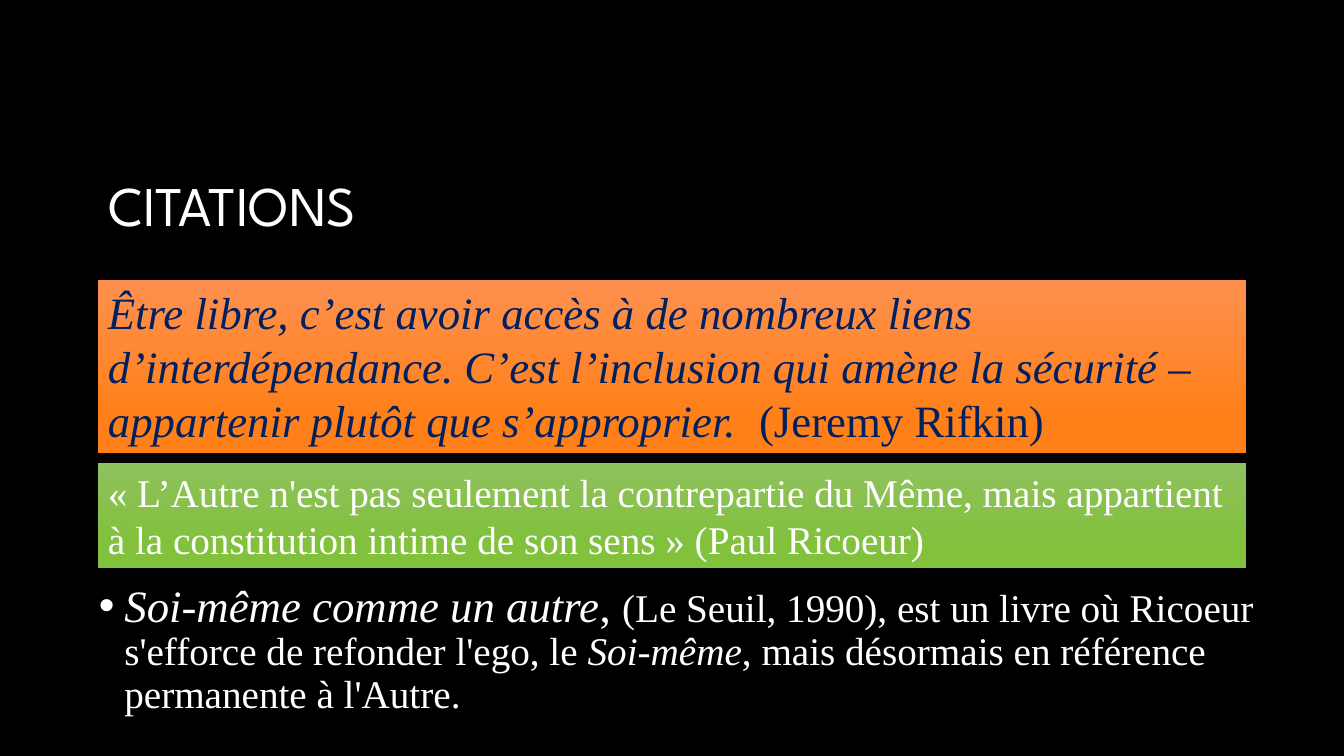
from dataclasses import dataclass

from lxml.etree import SubElement
from pptx import Presentation
from pptx.dml.color import RGBColor
from pptx.enum.shapes import MSO_SHAPE
from pptx.enum.text import MSO_ANCHOR, MSO_AUTO_SIZE, PP_ALIGN
from pptx.oxml.ns import qn
from pptx.slide import Slide
from pptx.text.text import TextFrame, _Paragraph
from pptx.util import Cm, Pt


@dataclass(frozen=True)
class Theme:
    background: RGBColor = RGBColor(0x00, 0x00, 0x00)
    light: RGBColor = RGBColor(0xFF, 0xFF, 0xFF)
    navy: RGBColor = RGBColor(0x00, 0x20, 0x60)
    orange: tuple = (RGBColor(0xFE, 0x90, 0x4F), RGBColor(0xFF, 0x80, 0x19))
    green: tuple = (RGBColor(0x8F, 0xC1, 0x5E), RGBColor(0x81, 0xC1, 0x3C))
    heading_font: str = "League Spartan"
    text_font: str = "Times New Roman"
    heading_size: Pt = Pt(40)
    large: Pt = Pt(32)
    medium: Pt = Pt(28)


@dataclass(frozen=True)
class Passage:
    text: str
    italic: bool = False
    size: Pt | None = None


@dataclass(frozen=True)
class Quote:
    top: Cm
    height: Cm
    gradient: tuple
    color: RGBColor
    size: Pt
    passages: tuple


THEME = Theme()
LEFT = Cm(2.47)
QUOTE_WIDTH = Cm(28.93)
BULLET_INDENT = Cm(0.64)

QUOTES = (
    Quote(Cm(7.06), Cm(4.36), THEME.orange, THEME.navy, THEME.large, (
        Passage("Être libre, c’est avoir accès à de nombreux liens d’interdépendance. "
                "C’est l’inclusion qui amène la sécurité – appartenir plutôt que "
                "s’approprier.  ", italic=True),
        Passage("(Jeremy Rifkin)"),
    )),
    Quote(Cm(11.67), Cm(2.65), THEME.green, THEME.light, THEME.medium, (
        Passage("« L’Autre n'est pas seulement la contrepartie du Même, mais appartient "
                "à la constitution intime de son sens » (Paul Ricoeur)"),
    )),
)

BOOK = (
    Passage("Soi-même comme un autre", italic=True, size=THEME.large),
    Passage(", ", size=THEME.large),
    Passage("(Le Seuil, 1990), est un livre où Ricoeur s'efforce de refonder l'ego, le "),
    Passage("Soi-même", italic=True),
    Passage(", mais désormais en référence permanente à l'Autre."),
)


def style(paragraph: _Paragraph, font_name: str, size: Pt, color: RGBColor) -> None:
    paragraph.alignment = PP_ALIGN.LEFT
    paragraph.space_before = Pt(0)
    paragraph.font.name = font_name
    paragraph.font.size = size
    paragraph.font.color.rgb = color


def write(frame: TextFrame, passages: tuple, size: Pt, color: RGBColor) -> None:
    frame.word_wrap = True
    paragraph = frame.paragraphs[0]
    style(paragraph, THEME.text_font, size, color)
    for passage in passages:
        run = paragraph.add_run()
        run.text = passage.text
        if passage.italic:
            run.font.italic = True
        if passage.size:
            run.font.size = passage.size


def add_heading(slide: Slide) -> None:
    heading = slide.shapes.title
    heading.left, heading.top, heading.width, heading.height = LEFT, Cm(3.45), Cm(23.85), Cm(3.58)
    frame = heading.text_frame
    frame.text = "CITATIONS"
    frame.vertical_anchor = MSO_ANCHOR.MIDDLE
    frame.auto_size = MSO_AUTO_SIZE.NONE
    frame.paragraphs[0].line_spacing = 0.9
    style(frame.paragraphs[0], THEME.heading_font, THEME.heading_size, THEME.light)


def add_quote(slide: Slide, quote: Quote) -> None:
    panel = slide.shapes.add_shape(MSO_SHAPE.RECTANGLE, LEFT, quote.top, QUOTE_WIDTH, quote.height)
    panel.shadow.inherit = False
    panel.line.fill.background()
    panel.fill.gradient()
    panel.fill.gradient_angle = 270
    for stop, color, position in zip(panel.fill.gradient_stops, quote.gradient, (0, 0.78)):
        stop.color.rgb = color
        stop.position = position
    frame = panel.text_frame
    frame.auto_size = MSO_AUTO_SIZE.SHAPE_TO_FIT_TEXT
    frame.vertical_anchor = MSO_ANCHOR.TOP
    write(frame, quote.passages, quote.size, quote.color)


def add_book(slide: Slide) -> None:
    book = slide.placeholders[1]
    book.left, book.top, book.width, book.height = Cm(2.24), Cm(14.58), Cm(29.72), Cm(3.89)
    frame = book.text_frame
    frame.auto_size = MSO_AUTO_SIZE.NONE
    paragraph = frame.paragraphs[0]
    paragraph.line_spacing = 0.9
    paragraph.space_before = Pt(0)
    properties = paragraph._p.get_or_add_pPr()
    properties.set("marL", str(BULLET_INDENT))
    properties.set("indent", str(-BULLET_INDENT))
    SubElement(properties, qn("a:buFont"), typeface="Arial")
    SubElement(properties, qn("a:buChar"), char="•")
    write(frame, BOOK, THEME.medium, THEME.light)


def main() -> None:
    presentation = Presentation()
    presentation.slide_width, presentation.slide_height = Cm(33.87), Cm(19.05)
    slide = presentation.slides.add_slide(presentation.slide_layouts[1])
    slide.background.fill.solid()
    slide.background.fill.fore_color.rgb = THEME.background
    add_heading(slide)
    add_book(slide)
    for quote in QUOTES:
        add_quote(slide, quote)
    presentation.save("out.pptx")


if __name__ == "__main__":
    main()
